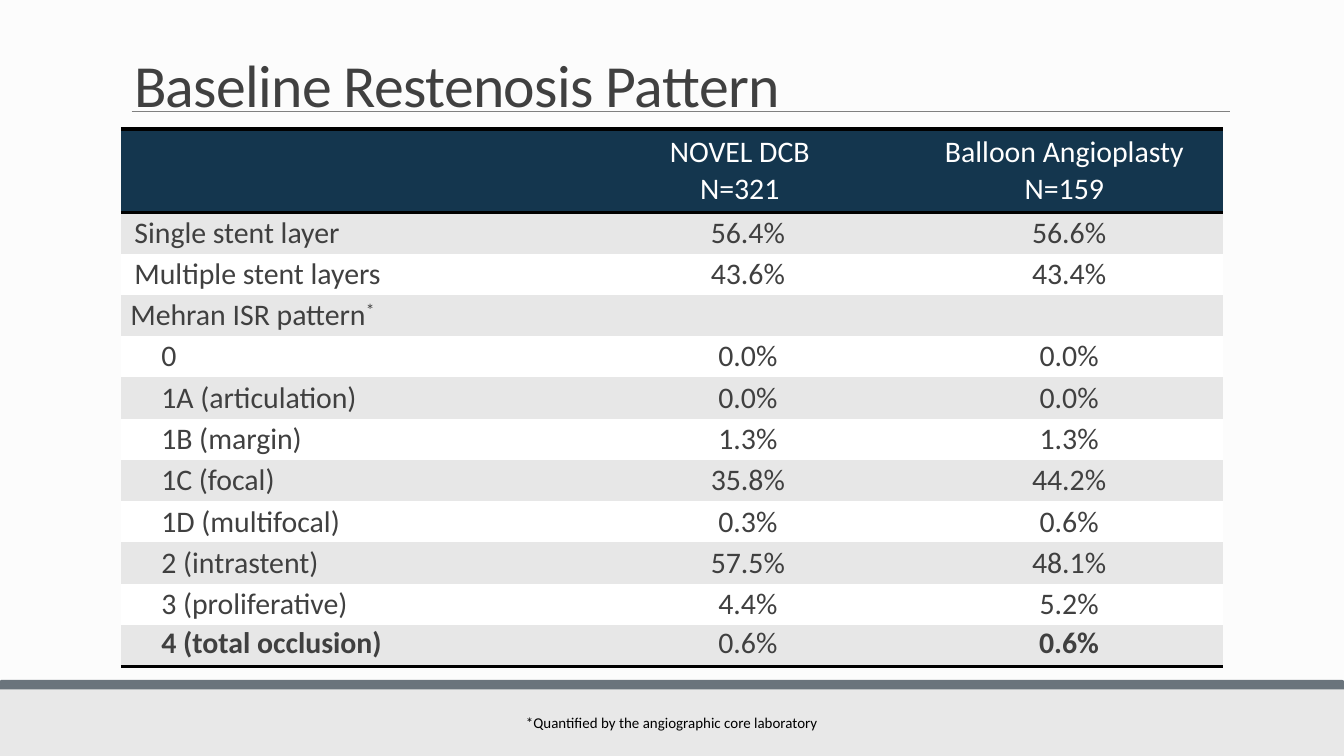
from lxml.etree import SubElement
from pptx import Presentation
from pptx.dml.color import RGBColor
from pptx.enum.shapes import MSO_CONNECTOR, MSO_SHAPE
from pptx.enum.text import MSO_ANCHOR, PP_ALIGN
from pptx.oxml.ns import qn
from pptx.util import Inches, Pt

SLIDE_WIDTH = 10
SLIDE_HEIGHT = SLIDE_WIDTH * 9 / 16
COLORS = {
    "background": "FCFCFC", "footer": "E8E8E8", "bar": "6A747C", "rule": "808080",
    "text": "404040", "header": "14364E", "band": "E7E7E7", "white": "FFFFFF",
    "black": "000000",
}
FONT = "Calibri"
NO_STYLE = "{2D5ABB26-0587-4C30-8999-92F81FD0307C}"
HEADERS = ["", "NOVEL DCB\nN=321", "Balloon Angioplasty\nN=159"]
HEADER_MARGINS = [(0.05, 0.04, 0.07, 0.04), (0.05, 0.04, 0.07, 0.04), (0.05, 0, 0.02, 0)]
LAYERS = [
    ("Single stent layer", "56.4%", "56.6%"),
    ("Multiple stent layers", "43.6%", "43.4%"),
]
PATTERNS = [
    ("0", "0.0%", "0.0%"),
    ("1A (articulation)", "0.0%", "0.0%"),
    ("1B (margin)", "1.3%", "1.3%"),
    ("1C (focal)", "35.8%", "44.2%"),
    ("1D (multifocal)", "0.3%", "0.6%"),
    ("2 (intrastent)", "57.5%", "48.1%"),
    ("3 (proliferative)", "4.4%", "5.2%"),
    ("4 (total occlusion)", "0.6%", "0.6%"),
]
ROWS = LAYERS + [("Mehran ISR pattern", "", "")] + PATTERNS


def rgb(name):
    return RGBColor.from_string(COLORS[name])


def style(paragraph, size, color, align=PP_ALIGN.LEFT, bold=False):
    paragraph.alignment = align
    font = paragraph.font
    font.name, font.size, font.bold = FONT, Pt(size), bold
    font.color.rgb = rgb(color)


def add_block(slide, kind, left, top, width, height, color):
    shape = slide.shapes.add_shape(
        kind, Inches(left), Inches(top), Inches(width), Inches(height))
    shape.shadow.inherit = False
    shape.fill.solid()
    shape.fill.fore_color.rgb = rgb(color)
    shape.line.fill.background()


def add_title(slide, left, top, width, height):
    # Rule under the title
    rule_top = Inches(top + 0.59)
    rule = slide.shapes.add_connector(
        MSO_CONNECTOR.STRAIGHT, Inches(left + 0.08), rule_top,
        Inches(left + width), rule_top)
    rule.line.color.rgb = rgb("rule")
    rule.line.width = Pt(0.5)
    SubElement(rule._element.spPr, qn("a:effectLst"))

    # Title text
    box = slide.shapes.add_textbox(
        Inches(left), Inches(top), Inches(width), Inches(height))
    frame = box.text_frame
    frame.word_wrap = True
    frame.vertical_anchor = MSO_ANCHOR.BOTTOM
    paragraph = frame.paragraphs[0]
    run = paragraph.add_run()
    run.text = "Baseline Restenosis Pattern"
    run._r.get_or_add_rPr().set("spc", "-40")
    paragraph.line_spacing = 0.85
    style(paragraph, 32, "text")


def add_border(cell, side):
    line = SubElement(cell._tc.get_or_add_tcPr(), qn(f"a:{side}"), w=str(Pt(2)))
    fill = SubElement(line, qn("a:solidFill"))
    SubElement(fill, qn("a:srgbClr"), val=COLORS["black"])


def fill_cell(cell, text, fill, color, margins, align, borders=(), bold=False):
    for side in borders:
        add_border(cell, side)
    cell.fill.solid()
    cell.fill.fore_color.rgb = rgb(fill)
    cell.margin_left, cell.margin_top, cell.margin_right, cell.margin_bottom = map(
        Inches, margins)
    cell.vertical_anchor = MSO_ANCHOR.MIDDLE
    cell.text_frame.text = text
    for paragraph in cell.text_frame.paragraphs:
        style(paragraph, 16, color, align, bold)


def add_results_table(slide, left, top, width, height):
    frame = slide.shapes.add_table(
        len(ROWS) + 1, len(HEADERS), Inches(left), Inches(top),
        Inches(width), Inches(height))
    table = frame.table
    table._tbl.tblPr.find(qn("a:tableStyleId")).text = NO_STYLE

    # Grid
    value_width, header_height = 2.39, 0.62
    for column, column_width in zip(
            table.columns, [width - 2 * value_width, value_width, value_width]):
        column.width = Inches(column_width)
    for row in table.rows:
        row.height = Inches((height - header_height) / len(ROWS))
    table.rows[0].height = Inches(header_height)

    # Header row
    for index, (text, margins) in enumerate(zip(HEADERS, HEADER_MARGINS)):
        fill_cell(table.cell(0, index), text, "header", "white", margins,
                  PP_ALIGN.CENTER, ("lnT", "lnB"))

    # Body rows, banded
    for number, values in enumerate(ROWS, 1):
        last = number == len(ROWS)
        group = not values[1]
        for index, text in enumerate(values):
            cell = table.cell(number, index)
            fill_cell(cell, text, "band" if number % 2 else "white", "text",
                      (0.07, 0, 0.07, 0) if group else (0.1, 0, 0, 0),
                      PP_ALIGN.CENTER if index else PP_ALIGN.LEFT,
                      ("lnB",) if last else (), last and index != 1)
            if last:
                cell.vertical_anchor = MSO_ANCHOR.TOP
        label = table.cell(number, 0).text_frame.paragraphs[0]
        if group:
            star = label.add_run()
            star.text = "*"
            star._r.get_or_add_rPr().set("baseline", "30000")
        elif values in PATTERNS:
            properties = label._p.get_or_add_pPr()
            properties.set("marL", str(Inches(0.2)))
            properties.set("indent", "0")


def add_footer(slide, left, top, width, height):
    add_block(slide, MSO_SHAPE.RECTANGLE, left, top + 0.02, width, height - 0.02, "footer")
    add_block(slide, MSO_SHAPE.ROUND_2_SAME_RECTANGLE, left, top, width, 0.07, "bar")

    # Footnote
    note_width = 2.4
    box = slide.shapes.add_textbox(
        Inches(left + (width - note_width) / 2), Inches(top + 0.2),
        Inches(note_width), Inches(0.24))
    box.text_frame.word_wrap = False
    paragraph = box.text_frame.paragraphs[0]
    paragraph.text = "*Quantified by the angiographic core laboratory"
    style(paragraph, 8, "black", PP_ALIGN.CENTER)


def main():
    presentation = Presentation()
    presentation.slide_width = Inches(SLIDE_WIDTH)
    presentation.slide_height = Inches(SLIDE_HEIGHT)
    slide = presentation.slides.add_slide(presentation.slide_layouts[6])
    slide.background.fill.solid()
    slide.background.fill.fore_color.rgb = rgb("background")
    add_footer(slide, 0, 5.06, SLIDE_WIDTH, SLIDE_HEIGHT - 5.06)
    add_title(slide, 0.9, 0.24, 8.25, 0.7)
    add_results_table(slide, 0.9, 0.96, 8.2, 4)
    presentation.save("out.pptx")


if __name__ == "__main__":
    main()
